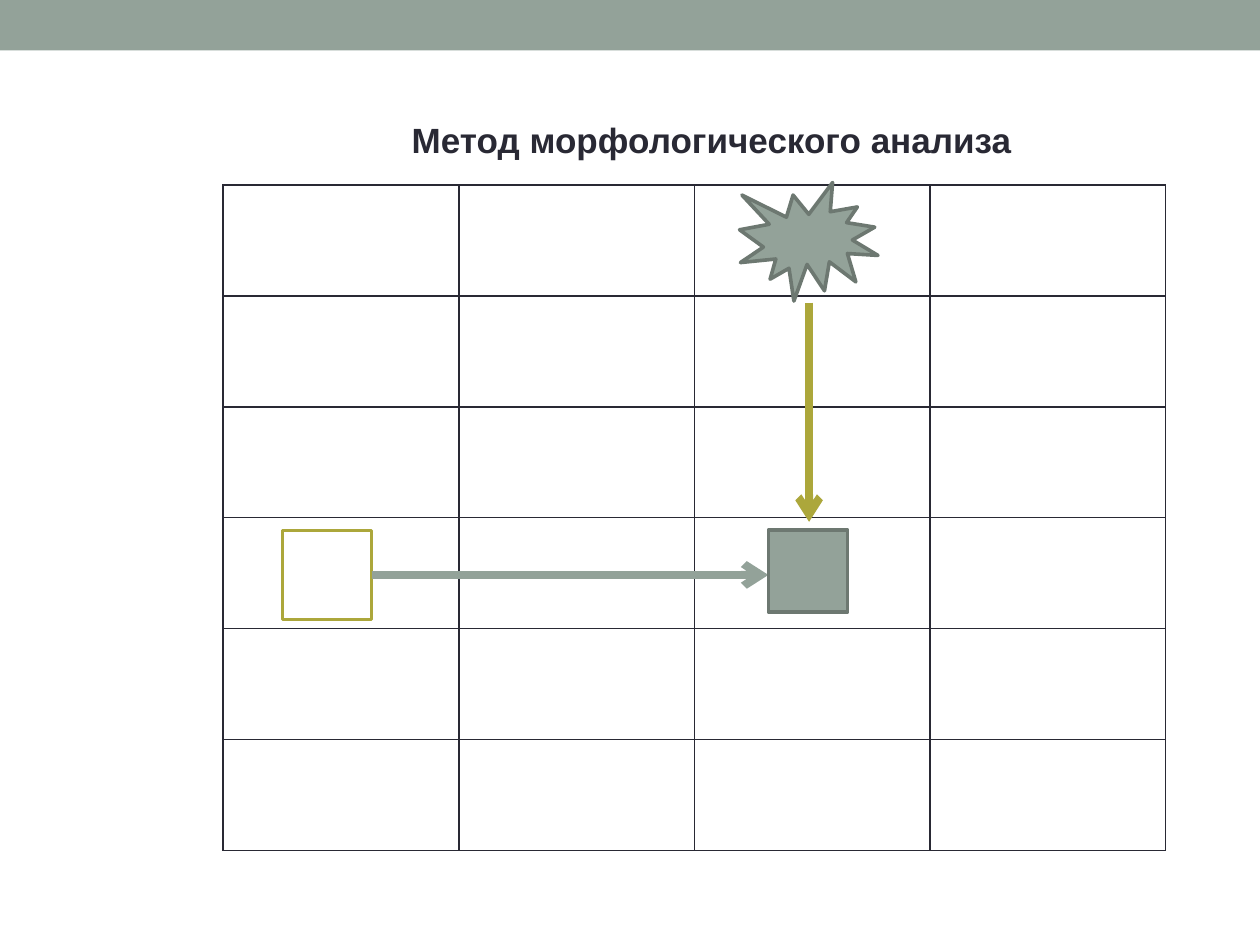
import pptx
import pptx.dml.color
import pptx.enum.shapes
import pptx.enum.text
import pptx.oxml.ns
import pptx.util
from lxml import etree

Cm = pptx.util.Cm
Pt = pptx.util.Pt
RGB = pptx.dml.color.RGBColor
KIND = pptx.enum.shapes.MSO_SHAPE
qn = pptx.oxml.ns.qn

INK = RGB(0x29, 0x29, 0x34)
SAGE = RGB(0x93, 0xA2, 0x99)
EDGE = RGB(0x6D, 0x78, 0x71)
OLIVE = RGB(0xAC, 0xA7, 0x3B)
WHITE = RGB(0xFF, 0xFF, 0xFF)

ROWS, COLS = 6, 4


def add_text(slide, text, left, top, width, height, size=20, bold=False,
             color=INK, font="Arial"):
    box = slide.shapes.add_textbox(Cm(left), Cm(top), Cm(width), Cm(height))
    frame = box.text_frame
    frame.word_wrap = False
    frame.auto_size = pptx.enum.text.MSO_AUTO_SIZE.SHAPE_TO_FIT_TEXT
    run = frame.paragraphs[0].add_run()
    run.text = text
    run.font.name = font
    run.font.size = Pt(size)
    run.font.bold = bold
    run.font.color.rgb = color


def add_shape(slide, kind, left, top, width, height, fill, line=None, weight=2.08):
    shape = slide.shapes.add_shape(kind, Cm(left), Cm(top), Cm(width), Cm(height))
    shape.shadow.inherit = False
    shape.fill.solid()
    shape.fill.fore_color.rgb = fill
    if line is None:
        shape.line.fill.background()
    else:
        shape.line.color.rgb = line
        shape.line.width = Pt(weight)
    return shape


def add_arrow(slide, x1, y1, x2, y2, color):
    arrow = slide.shapes.add_connector(
        pptx.enum.shapes.MSO_CONNECTOR.STRAIGHT, Cm(x1), Cm(y1), Cm(x2), Cm(y2))
    arrow.line.color.rgb = color
    arrow.line.width = Pt(4.5)
    etree.SubElement(arrow.line._get_or_add_ln(), qn("a:tailEnd"), type="arrow")
    etree.SubElement(arrow._element.spPr, qn("a:effectLst"))
    return arrow


def set_edges(cell, color, weight):
    props = cell._tc.get_or_add_tcPr()
    for side in ("lnL", "lnR", "lnT", "lnB"):
        edge = etree.SubElement(props, qn("a:" + side), w=str(Pt(weight)))
        fill = etree.SubElement(edge, qn("a:solidFill"))
        etree.SubElement(fill, qn("a:srgbClr"), val=str(color))


def add_grid(slide, left, top, width, height):
    table = slide.shapes.add_table(
        ROWS, COLS, Cm(left), Cm(top), Cm(width), Cm(height)).table
    table.first_row = False
    table.horz_banding = False
    for cell in table.iter_cells():
        set_edges(cell, INK, 1)
        cell.fill.background()


def main():
    deck = pptx.Presentation()
    deck.slide_width, deck.slide_height = Cm(25.4), Cm(19.05)
    slide = deck.slides.add_slide(deck.slide_layouts[6])

    # Top band and empty matrix
    add_shape(slide, KIND.RECTANGLE, 0, 0, 25.4, 1.02, SAGE)
    add_grid(slide, 4.5, 3.73, 19, 13.41)

    # Row marker and the arrows to the chosen cell
    start = add_shape(slide, KIND.RECTANGLE, 5.69, 10.69, 1.8, 1.8,
                      WHITE, OLIVE, 1.5)
    add_arrow(slide, 16.31, 6.1, 16.31, 10.52, OLIVE)
    across = add_arrow(slide, 7.49, 11.59, 15.49, 11.59, SAGE)
    across.begin_connect(start, 3)

    # Column marker and chosen cell
    add_shape(slide, KIND.EXPLOSION1, 14.91, 3.68, 2.79, 2.39, SAGE, EDGE)
    add_shape(slide, KIND.RECTANGLE, 15.49, 10.69, 1.6, 1.65, SAGE, EDGE)

    # Title
    add_text(slide, "Метод морфологического анализа", 8.05, 2.26, 12.7, 1.12,
             bold=True)

    deck.save("out.pptx")


if __name__ == "__main__":
    main()
